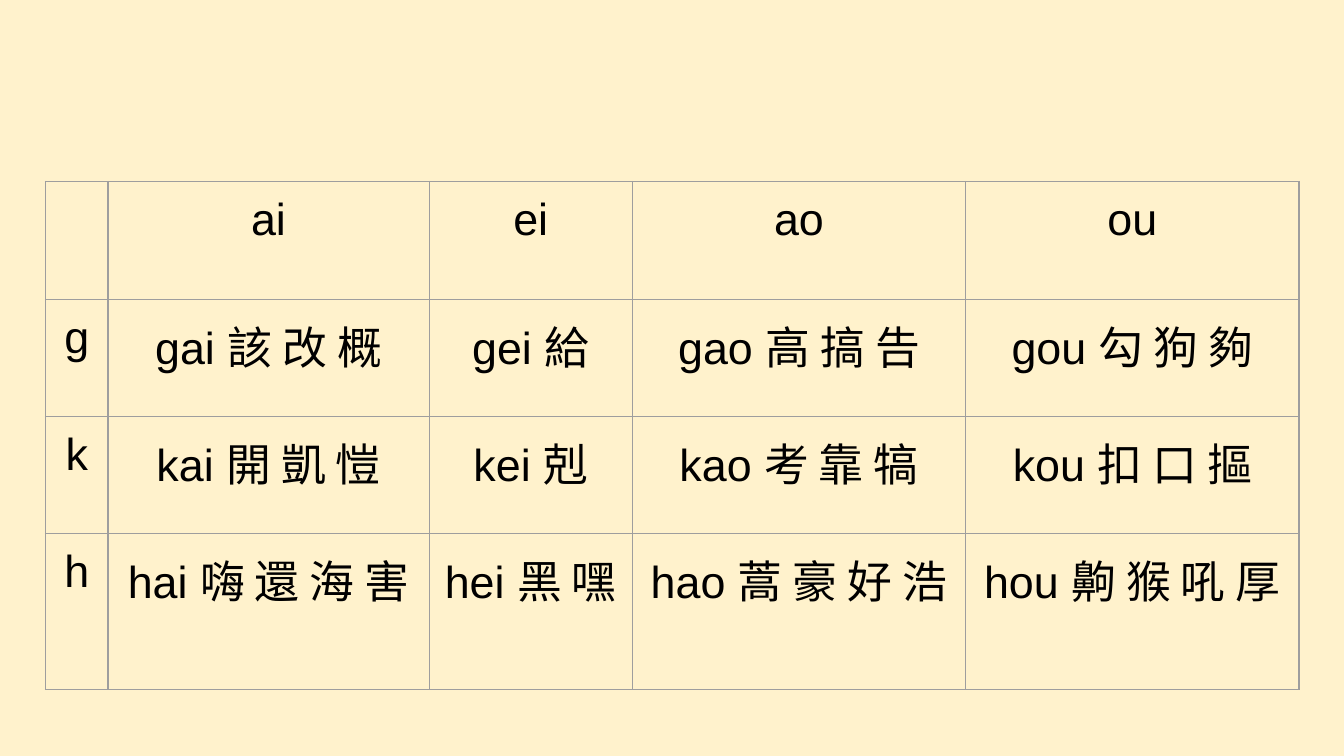
from lxml import etree
from pptx import Presentation
from pptx.dml.color import RGBColor
from pptx.enum.text import MSO_ANCHOR, PP_ALIGN
from pptx.oxml.ns import qn
from pptx.util import Cm, Pt

CENTER = PP_ALIGN.CENTER
TOP = MSO_ANCHOR.TOP

BACKGROUND = "FFF2CC"
GRID_COLOR = "9E9E9E"
TEXT_COLOR = "000000"

COLUMN_WIDTHS = [1.18, 6.07, 3.84, 6.3, 6.3]
ROW_HEIGHTS = [2.23, 2.21, 2.21, 2.21]

SYLLABLES = [
    ["", "ai", "ei", "ao", "ou"],
    ["g", "gai 該 改 概", "gei 給", "gao 高 搞 告", "gou 勾 狗 夠"],
    ["k", "kai 開 凱 愷", "kei 剋", "kao 考 靠 犒", "kou 扣 口 摳"],
    ["h", "hai 嗨 還 海 害", "hei 黑 嘿", "hao 蒿 豪 好 浩", "hou 齁 猴 吼 厚"],
]


def rgb(value):
    return RGBColor.from_string(value)


def write_text(frame, text, size=24, font="Arial", color=TEXT_COLOR, align=CENTER):
    paragraph = frame.paragraphs[0]
    paragraph.alignment = align
    paragraph.font.size = Pt(size)
    if not text:
        return
    run = paragraph.add_run()
    run.text = text
    run.font.name = font
    run.font.size = Pt(size)
    run.font.color.rgb = rgb(color)


def draw_borders(cell, color, width):
    properties = cell._tc.get_or_add_tcPr()
    # Borders come before the fill in the cell properties
    for position, side in enumerate(("a:lnL", "a:lnR", "a:lnT", "a:lnB")):
        line = etree.Element(qn(side), w=str(Pt(width)))
        fill = etree.SubElement(line, qn("a:solidFill"))
        etree.SubElement(fill, qn("a:srgbClr"), val=color)
        properties.insert(position, line)


def format_cell(cell, text):
    cell.fill.background()
    cell.vertical_anchor = TOP
    cell.margin_left = cell.margin_right = Cm(0.25)
    cell.margin_top = cell.margin_bottom = Cm(0.25)
    draw_borders(cell, GRID_COLOR, 0.75)
    write_text(cell.text_frame, text)


def add_syllable_table(slide, left, top):
    table = slide.shapes.add_table(
        len(ROW_HEIGHTS), len(COLUMN_WIDTHS), Cm(left), Cm(top),
        Cm(sum(COLUMN_WIDTHS)), Cm(sum(ROW_HEIGHTS))).table
    table.first_row = False
    table.horz_banding = False
    for column, width in zip(table.columns, COLUMN_WIDTHS):
        column.width = Cm(width)
    for row, height, syllables in zip(table.rows, ROW_HEIGHTS, SYLLABLES):
        row.height = Cm(height)
        for cell, text in zip(row.cells, syllables):
            format_cell(cell, text)


def main():
    deck = Presentation()
    deck.slide_width = Cm(25.4)
    deck.slide_height = Cm(14.29)
    slide = deck.slides.add_slide(deck.slide_layouts[6])

    # Background
    slide.background.fill.solid()
    slide.background.fill.fore_color.rgb = rgb(BACKGROUND)

    # Initials by finals
    add_syllable_table(slide, 0.86, 3.43)

    deck.save("out.pptx")


if __name__ == "__main__":
    main()
